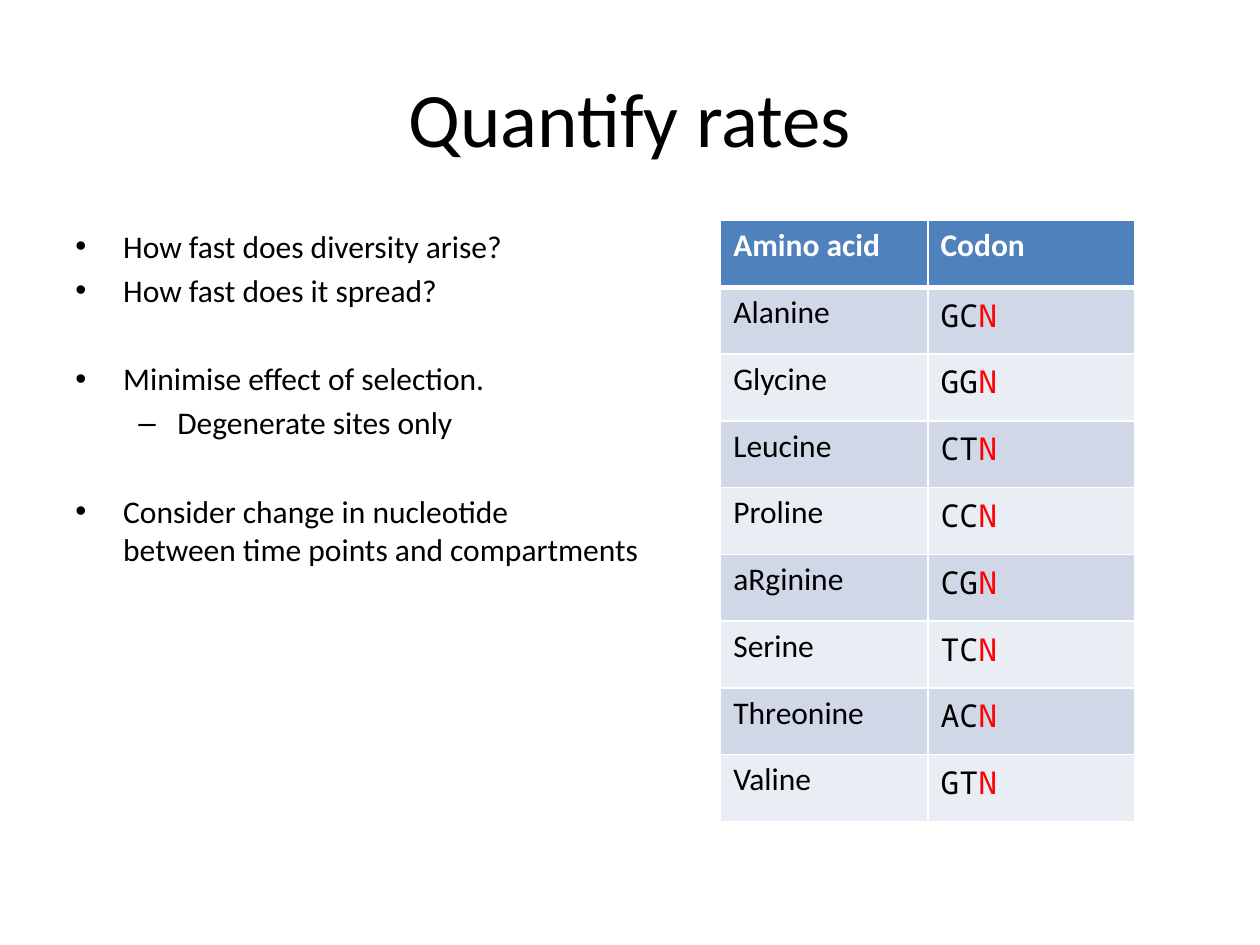
from dataclasses import dataclass

from lxml import etree
from pptx import Presentation
from pptx import util as u
from pptx.dml.color import RGBColor
from pptx.enum import text
from pptx.oxml.ns import qn

COLOURS = {
    "text": "000000",
    "variable": "FF0000",
    "white": "FFFFFF",
    "header": "4F81BD",
    "odd row": "D0D8E8",
    "even row": "E9EDF4",
}
BODY_FONT, CODON_FONT = "Calibri", "Noto Sans Mono"
BODY_SIZE = 18
PARAGRAPH_GAP = 3.6
SECTION_GAP = 29


@dataclass
class Level:
    bullet: str
    margin: float
    hanging: float


@dataclass
class Point:
    wording: str
    level: int = 0
    gap: float = PARAGRAPH_GAP


@dataclass
class AminoAcid:
    name: str
    fixed_bases: str


LEVELS = [Level("•", 0.38, 0.38), Level("–", 0.81, 0.31)]
POINTS = [
    Point("How fast does diversity arise?"),
    Point("How fast does it spread?"),
    Point("Minimise effect of selection.", gap=SECTION_GAP),
    Point("Degenerate sites only", level=1),
    Point("Consider change in nucleotide \nbetween time points and compartments", gap=SECTION_GAP),
]
AMINO_ACIDS = [
    AminoAcid("Alanine", "GC"),
    AminoAcid("Glycine", "GG"),
    AminoAcid("Leucine", "CT"),
    AminoAcid("Proline", "CC"),
    AminoAcid("aRginine", "CG"),
    AminoAcid("Serine", "TC"),
    AminoAcid("Threonine", "AC"),
    AminoAcid("Valine", "GT"),
]


def format_run(run, colour: str = "text", font: str = BODY_FONT,
               size: float = BODY_SIZE, bold: bool = False) -> None:
    for name, value in {"name": font, "size": u.Pt(size), "bold": bold}.items():
        setattr(run.font, name, value)
    run.font.color.rgb = RGBColor.from_string(COLOURS[colour])


def add_run(paragraph, wording: str, **run_format) -> None:
    run = paragraph.add_run()
    run.text = wording
    format_run(run, **run_format)


def add_text_frame(slide, left: float, top: float, width: float, height: float, anchor):
    box = slide.shapes.add_textbox(*map(u.Inches, (left, top, width, height)))
    frame = box.text_frame
    for name, value in {"word_wrap": True, "vertical_anchor": anchor}.items():
        setattr(frame, name, value)
    return frame


def add_title(slide, wording: str) -> None:
    frame = add_text_frame(slide, 0.5, 0.3, 9, 1.25, text.MSO_ANCHOR.MIDDLE)
    paragraph = frame.paragraphs[0]
    paragraph.alignment = text.PP_ALIGN.CENTER
    add_run(paragraph, wording, size=44)


def set_bullet(paragraph, level: Level) -> None:
    properties = paragraph._p.get_or_add_pPr()
    properties.set("marL", str(u.Inches(level.margin)))
    properties.set("indent", str(-u.Inches(level.hanging)))
    etree.SubElement(properties, qn("a:buFont"), typeface="Arial")
    etree.SubElement(properties, qn("a:buChar"), char=level.bullet)


def add_points(slide, points: list[Point]) -> None:
    frame = add_text_frame(slide, 0.5, 1.75, 9, 4.95, text.MSO_ANCHOR.TOP)
    for index, point in enumerate(points):
        paragraph = frame.add_paragraph() if index else frame.paragraphs[0]
        paragraph.text = point.wording
        paragraph.level = point.level
        paragraph.space_before = u.Pt(point.gap)
        set_bullet(paragraph, LEVELS[point.level])
        for run in paragraph.runs:
            format_run(run)


def style_cell(cell, fill: str, top: float = 1, bottom: float = 1) -> None:
    """Give the cell its fill and white borders; widths are in points."""
    properties = cell._tc.get_or_add_tcPr()
    for side, width in {"L": 1, "R": 1, "T": top, "B": bottom}.items():
        line = etree.SubElement(properties, qn(f"a:ln{side}"), w=str(u.Pt(width)))
        solid = etree.SubElement(line, qn("a:solidFill"))
        etree.SubElement(solid, qn("a:srgbClr"), val=COLOURS["white"])
    cell.fill.solid()
    cell.fill.fore_color.rgb = RGBColor.from_string(COLOURS[fill])


def add_codon_table(slide, amino_acids: list[AminoAcid]) -> None:
    row_count = len(amino_acids) + 1
    row_height = u.Inches(0.53)
    table = slide.shapes.add_table(row_count, 2, u.Inches(5.72), u.Inches(1.75),
                                   u.Inches(3.29), row_height * row_count).table
    for row in table.rows:
        row.height = row_height

    for column, heading in enumerate(("Amino acid", "Codon")):
        cell = table.cell(0, column)
        style_cell(cell, "header", bottom=3)
        add_run(cell.text_frame.paragraphs[0], heading, colour="white", bold=True)

    for row, amino_acid in enumerate(amino_acids, start=1):
        name_cell, codon_cell = table.cell(row, 0), table.cell(row, 1)
        for cell in (name_cell, codon_cell):
            style_cell(cell, "odd row" if row % 2 else "even row", top=3 if row == 1 else 1)
        add_run(name_cell.text_frame.paragraphs[0], amino_acid.name)
        codon = codon_cell.text_frame.paragraphs[0]
        add_run(codon, amino_acid.fixed_bases, font=CODON_FONT)
        add_run(codon, "N", font=CODON_FONT, colour="variable")


def main() -> None:
    presentation = Presentation()
    presentation.slide_width, presentation.slide_height = u.Inches(10), u.Inches(7.5)
    slide = presentation.slides.add_slide(presentation.slide_layouts[6])
    add_title(slide, "Quantify rates")
    add_points(slide, POINTS)
    add_codon_table(slide, AMINO_ACIDS)
    presentation.save("out.pptx")


if __name__ == "__main__":
    main()
